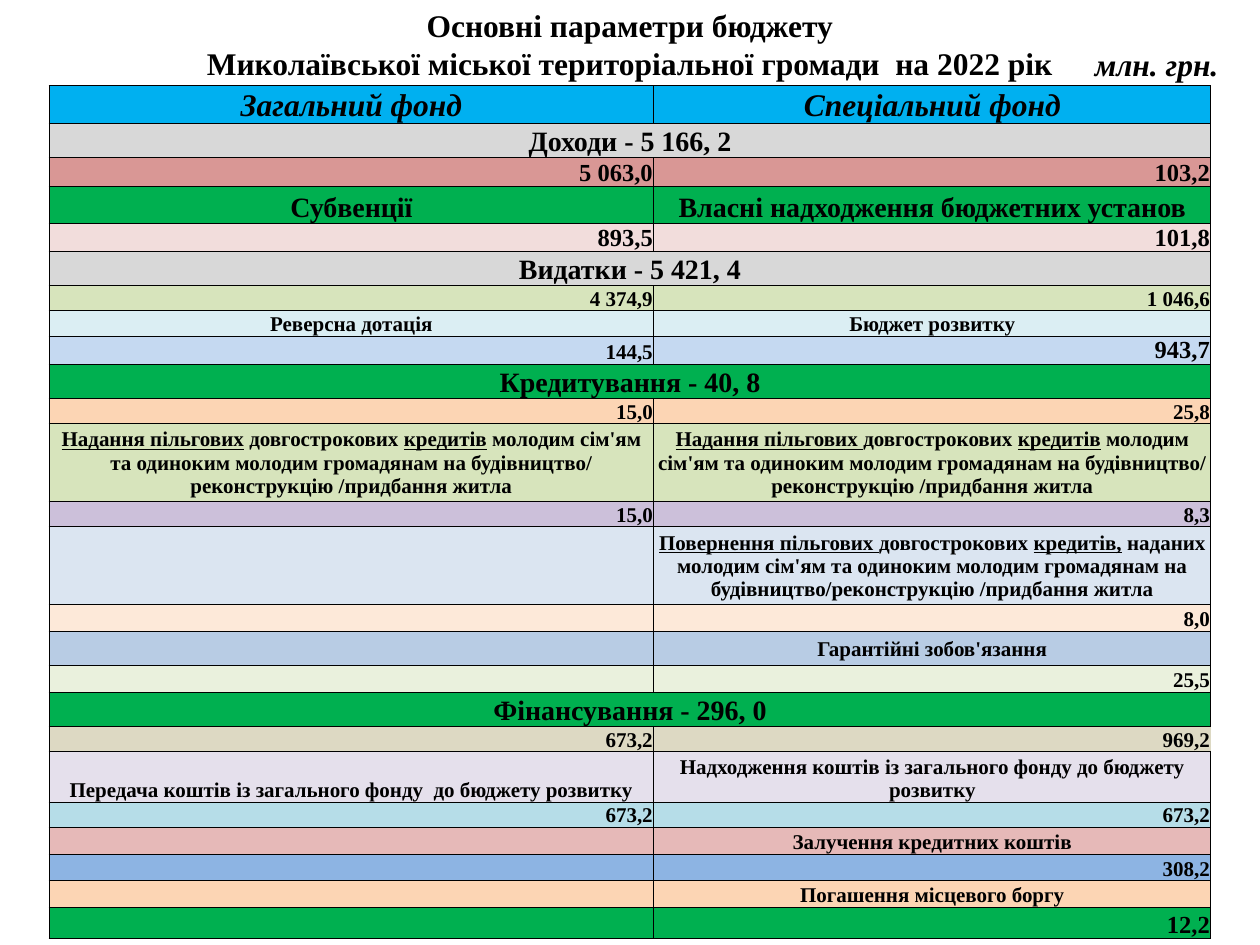
from dataclasses import dataclass

from lxml.etree import SubElement
from pptx import Presentation
from pptx.dml.color import RGBColor
from pptx.enum.text import MSO_ANCHOR as Anchor, PP_ALIGN as Align
from pptx.oxml.ns import qn
from pptx.util import Cm, Pt


@dataclass(frozen=True)
class Theme:
    font: str = "Times New Roman"
    ink: str = "000000"
    blue: str = "00B0F0"
    grey: str = "D8D8D8"
    green: str = "00B050"
    lime: str = "D7E4BC"
    peach: str = "FCD5B4"
    title: int = 18
    section: int = 16
    total: int = 14
    body: int = 12
    border: float = 0.5


THEME = Theme()


@dataclass
class BudgetRow:
    height: float
    fill: str
    texts: tuple
    size: int = THEME.body
    right_size: int = 0
    align: int = Align.CENTER
    anchor: int = Anchor.BOTTOM
    italic: bool = False
    open_right: bool = False

    def size_at(self, column):
        return self.right_size if column and self.right_size else self.size


def heading(left, right):
    return BudgetRow(0.76, THEME.blue, (left, right), THEME.title, italic=True)


def section(text, fill):
    return BudgetRow(0.69, fill, (text,), THEME.section)


def amounts(fill, left, right, size=THEME.body, height=0.51, **options):
    return BudgetRow(height, fill, (left, right), size, align=Align.RIGHT, **options)


def labels(fill, left, right, height=0.51, **options):
    return BudgetRow(height, fill, (left, right), **options)


LOANS = (" молодим сім'ям та одиноким молодим громадянам на будівництво/"
         " реконструкцію /придбання житла")

BUDGET = [
    heading("Загальний фонд", "Спеціальний фонд"),
    section("Доходи - 5 166, 2", THEME.grey),
    amounts("D99795", "5 063,0", "103,2", THEME.total, 0.58),
    labels(THEME.green, "Субвенції", "Власні надходження бюджетних установ",
           0.74, size=THEME.section),
    amounts("F2DDDC", "893,5", "101,8", THEME.total),
    section("Видатки - 5 421, 4", THEME.grey),
    amounts(THEME.lime, "4 374,9", "1 046,6"),
    labels("DBEEF3", "Реверсна дотація", "Бюджет розвитку"),
    amounts("C5D9F1", "144,5", "943,7", right_size=THEME.total),
    section("Кредитування - 40, 8", THEME.green),
    amounts(THEME.peach, "15,0", "25,8"),
    labels(THEME.lime, "_Надання пільгових_ довгострокових _кредитів_" + LOANS,
           "_Надання пільгових _довгострокових _кредитів_" + LOANS,
           1.57, anchor=Anchor.MIDDLE),
    amounts("CCC0DA", "15,0", "8,3"),
    labels("DBE5F1", "",
           "_Повернення пільгових _довгострокових _кредитів,_ наданих молодим"
           " сім'ям та одиноким молодим громадянам на"
           " будівництво/реконструкцію /придбання житла",
           1.57, anchor=Anchor.MIDDLE),
    amounts("FDE9D9", "", "8,0"),
    labels("B8CCE4", "", "Гарантійні зобов'язання", 0.69, anchor=Anchor.MIDDLE),
    amounts("EAF1DD", "", "25,5"),
    section("Фінансування - 296, 0", THEME.green),
    amounts("DDD9C3", "673,2", "969,2", open_right=True),
    labels("E5E0EC", "Передача коштів із загального фонду  до бюджету розвитку",
           "Надходження коштів із загального фонду до бюджету розвитку", 1.02),
    amounts("B6DDE8", "673,2", "673,2"),
    labels("E6B9B8", "", "Залучення кредитних коштів"),
    amounts("8DB4E3", "", "308,2"),
    labels(THEME.peach, "", "Погашення місцевого боргу"),
    amounts(THEME.green, "", "12,2", THEME.total),
]


def add_runs(paragraph, text, size, italic=False):
    for index, part in enumerate(text.split("_")):
        if not part:
            continue
        run = paragraph.add_run()
        run.text = part
        font = run.font
        font.name, font.size = THEME.font, Pt(size)
        font.bold, font.italic, font.underline = True, italic, index % 2 == 1
        font.color.rgb = RGBColor.from_string(THEME.ink)


def set_borders(cell, open_right):
    properties = cell._tc.get_or_add_tcPr()
    for side in ("lnL", "lnR", "lnT", "lnB"):
        line = SubElement(properties, qn(f"a:{side}"), w=str(Pt(THEME.border)))
        if side == "lnR" and open_right:
            SubElement(line, qn("a:noFill"))
        else:
            ink = SubElement(line, qn("a:solidFill"))
            SubElement(ink, qn("a:srgbClr"), val=THEME.ink)


def fill_cell(cell, row, column):
    set_borders(cell, row.open_right and column == 1)
    cell.fill.solid()
    cell.fill.fore_color.rgb = RGBColor.from_string(row.fill)
    cell.margin_left = cell.margin_right = cell.margin_top = Cm(0.02)
    cell.margin_bottom = 0
    cell.vertical_anchor = row.anchor
    text = row.texts[column] if column < len(row.texts) else ""
    paragraph = cell.text_frame.paragraphs[0]
    paragraph.alignment = row.align
    size = row.size_at(column)
    if text:
        add_runs(paragraph, text, size, row.italic)
    else:
        SubElement(paragraph._p, qn("a:endParaRPr"), sz=str(size * 100))


def add_budget_table(slide, rows):
    fund_widths = [Cm(12.19), Cm(11.23)]
    table = slide.shapes.add_table(
        len(rows), len(fund_widths), Cm(0.99), Cm(1.73),
        sum(fund_widths), Cm(sum(row.height for row in rows))).table
    table.first_row = table.horz_banding = False
    for column, width in enumerate(fund_widths):
        table.columns[column].width = width
    for index, row in enumerate(rows):
        table.rows[index].height = Cm(row.height)
        for column in range(len(fund_widths)):
            fill_cell(table.cell(index, column), row, column)
        if len(row.texts) == 1:
            table.cell(index, 0).merge(table.cell(index, 1))


def add_caption(slide, place, lines, align, italic=False):
    frame = slide.shapes.add_textbox(*map(Cm, place)).text_frame
    frame.word_wrap = True
    for index, line in enumerate(lines):
        paragraph = frame.add_paragraph() if index else frame.paragraphs[0]
        paragraph.alignment = align
        add_runs(paragraph, line, THEME.title, italic)


def main():
    deck = Presentation()
    deck.slide_width, deck.slide_height = Cm(25.4), Cm(19.05)
    slide = deck.slides.add_slide(deck.slide_layouts[6])
    add_budget_table(slide, BUDGET)
    add_caption(slide, (2.97, 0, 19.46, 2.57),
                ["Основні параметри бюджету",
                 "Миколаївської міської територіальної громади  на 2022 рік"],
                Align.CENTER)
    add_caption(slide, (21.82, 0.79, 3.18, 1.02), ["млн. грн."], Align.LEFT, True)
    deck.save("out.pptx")


if __name__ == "__main__":
    main()
